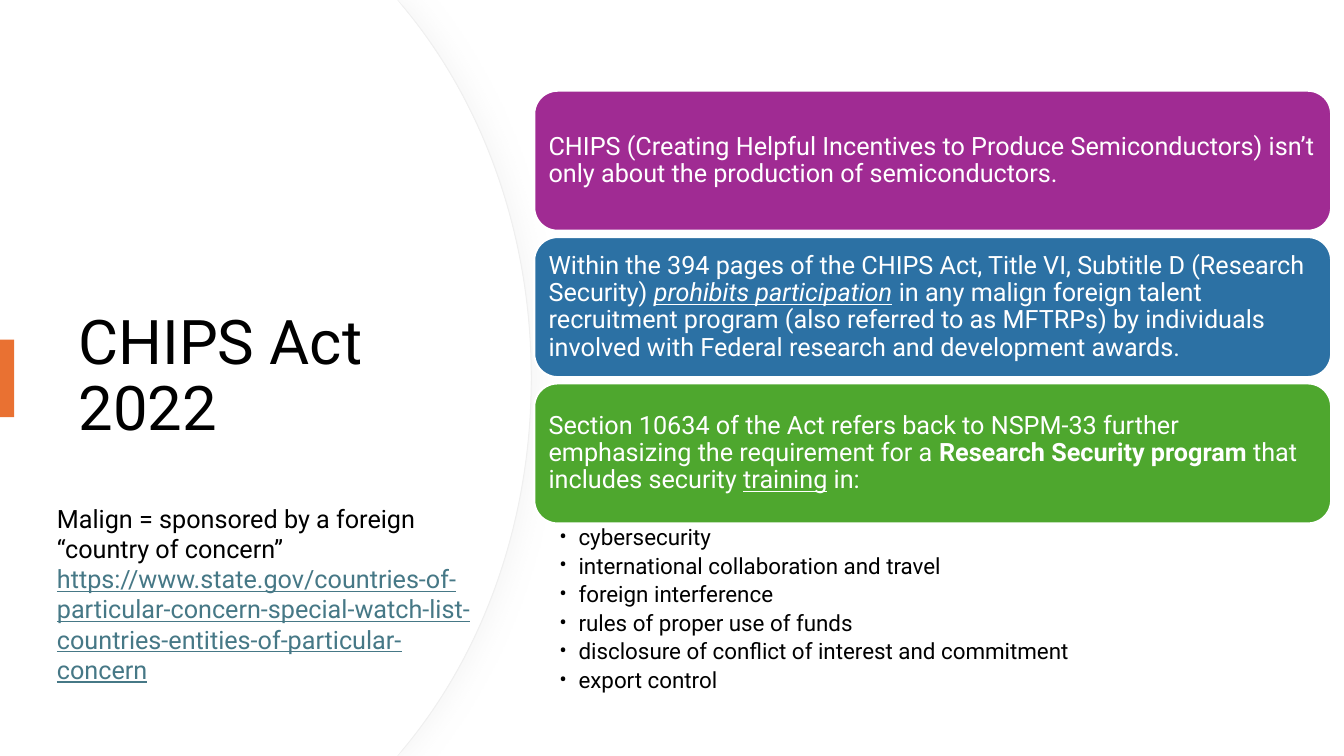
from dataclasses import dataclass

import lxml.etree
import pptx
import pptx.dml.color
import pptx.enum.shapes
import pptx.enum.text
import pptx.oxml
import pptx.oxml.ns
import pptx.util

COLORS = {
    "white": "FFFFFF",
    "black": "000000",
    "panel_edge": "EFEFEF",
    "panel_shadow": "D9D9D9",
    "accent": "E97132",
    "purple": "A02B93",
    "blue": "2C71A4",
    "green": "4EA72E",
    "link": "467886",
}
FONT = "Roboto"
SLIDE_WIDTH = pptx.util.Inches(13.333)
SLIDE_HEIGHT = pptx.util.Inches(7.5)


@dataclass(frozen=True)
class Area:
    left: float
    top: float
    width: float
    height: float

    def box(self) -> tuple[int, int, int, int]:
        return (across(self.left), down(self.top), across(self.width), down(self.height))


@dataclass(frozen=True)
class Run:
    text: str
    bold: bool = False
    italic: bool = False
    underline: bool = False
    color: str = ""


@dataclass(frozen=True)
class Card:
    color: str
    runs: tuple[Run, ...]


@dataclass(frozen=True)
class TextStyle:
    size: int
    color: str = "black"
    line_spacing: float = 1.0
    space_after: float = 0
    bullet: bool = False


TITLE_AREA = Area(5.1, 16.93, 31.35, 66)
ACCENT_AREA = Area(0, 44.93, 1.05, 10.27)
NOTE_AREA = Area(3.5, 65.87, 33, 25.6)
CARD_AREA = Area(39.75, 12, 59.3, 18.53)
CARD_STEP = 19.36
TOPICS_AREA = Area(39.75, 69.3, 59.3, 23.87)

CARDS = (
    Card("purple", (
        Run("CHIPS (Creating Helpful Incentives to Produce Semiconductors) isn’t "
            "only about the production of semiconductors."),
    )),
    Card("blue", (
        Run("Within the 394 pages of the CHIPS Act, Title VI, Subtitle D (Research Security) "),
        Run("prohibits participation", italic=True, underline=True),
        Run(" in any malign foreign talent recruitment program (also referred to as MFTRPs) "
            "by individuals involved with Federal research and development awards."),
    )),
    Card("green", (
        Run("Section 10634 of the Act refers back to NSPM-33 further emphasizing "
            "the requirement for a "),
        Run("Research Security program ", bold=True),
        Run("that includes security "),
        Run("training", underline=True),
        Run(" in:"),
    )),
)
TOPICS = (
    "cybersecurity",
    "international collaboration and travel",
    "foreign interference",
    "rules of proper use of funds",
    "disclosure of conflict of interest and commitment",
    "export control",
)
NOTE = (
    (Run("Malign = sponsored by a foreign “country of concern”"),),
    (Run("https://www.state.gov/countries-of-particular-concern-special-watch-list-"
         "countries-entities-of-particular-concern", underline=True, color="link"),),
)


def across(share: float) -> int:
    return round(SLIDE_WIDTH * share / 100)


def down(share: float) -> int:
    return round(SLIDE_HEIGHT * share / 100)


def rgb(name: str) -> pptx.dml.color.RGBColor:
    return pptx.dml.color.RGBColor.from_string(COLORS[name])


def paint(shape, fill: str, line: str = "", line_width: float = 0) -> None:
    shape.shadow.inherit = False
    shape.fill.solid()
    shape.fill.fore_color.rgb = rgb(fill)
    if line:
        shape.line.color.rgb = rgb(line)
        shape.line.width = pptx.util.Pt(line_width)
    else:
        shape.line.fill.background()


def add_bullet(paragraph) -> None:
    properties = paragraph._p.get_or_add_pPr()
    indent = pptx.util.Inches(0.19)
    properties.set("marL", str(indent))
    properties.set("indent", str(-indent))
    font = lxml.etree.SubElement(properties, pptx.oxml.ns.qn("a:buFont"))
    font.set("typeface", FONT)
    bullet = lxml.etree.SubElement(properties, pptx.oxml.ns.qn("a:buChar"))
    bullet.set("char", "•")


def write(shape, paragraphs, style: TextStyle, anchor: str = "TOP",
          insets: tuple[float, float, float, float] = (7.2, 3.6, 7.2, 3.6)) -> None:
    frame = shape.text_frame
    frame.word_wrap = True
    frame.vertical_anchor = pptx.enum.text.MSO_ANCHOR[anchor]
    (frame.margin_left, frame.margin_top,
     frame.margin_right, frame.margin_bottom) = map(pptx.util.Pt, insets)
    for index, runs in enumerate(paragraphs):
        paragraph = frame.add_paragraph() if index else frame.paragraphs[0]
        if style.bullet:
            add_bullet(paragraph)
        paragraph.alignment = pptx.enum.text.PP_ALIGN.LEFT
        paragraph.line_spacing = style.line_spacing
        paragraph.space_after = pptx.util.Pt(style.space_after)
        for part in runs:
            run = paragraph.add_run()
            run.text = part.text
            run.font.name = FONT
            run.font.size = pptx.util.Pt(style.size)
            run.font.bold = part.bold
            run.font.italic = part.italic
            run.font.underline = part.underline
            run.font.color.rgb = rgb(part.color or style.color)


def add_curved_panel(slide, shift: float = 0):
    upper = [(x + shift, y) for x, y in ((30.08, 1.07), (35.93, 13.6), (39.53, 30.93))]
    lower = [(x, 100 - y) for x, y in reversed(upper)]
    outline = [(29.55, 0), *upper, (39.53 + shift, 50), *lower, (29.55, 100), (0, 100)]
    builder = slide.shapes.build_freeform(0, 0)
    builder.add_line_segments([(across(x), down(y)) for x, y in outline], close=True)
    panel = builder.convert_to_shape()
    segments = list(panel._element.iter(pptx.oxml.ns.qn("a:lnTo")))
    for start in (2, 5):
        first, *others = segments[start:start + 3]
        first.tag = pptx.oxml.ns.qn("a:cubicBezTo")
        for segment in others:
            first.append(segment[0])
            segment.getparent().remove(segment)
    return panel


def add_panel_shadow(shape) -> None:
    effects = shape._element.spPr.find(pptx.oxml.ns.qn("a:effectLst"))
    effects.append(pptx.oxml.parse_xml(
        f'<a:outerShdw {pptx.oxml.ns.nsdecls("a")} blurRad="{pptx.util.Pt(20)}" '
        f'dist="{pptx.util.Pt(3)}" dir="0" algn="l" rotWithShape="0">'
        f'<a:srgbClr val="{COLORS["panel_shadow"]}"><a:alpha val="25000"/></a:srgbClr>'
        '</a:outerShdw>'))


def main() -> None:
    presentation = pptx.Presentation()
    presentation.slide_width = SLIDE_WIDTH
    presentation.slide_height = SLIDE_HEIGHT
    slide = presentation.slides.add_slide(presentation.slide_layouts[6])
    shapes = slide.shapes
    shape_kinds = pptx.enum.shapes.MSO_SHAPE

    edge_panel = add_curved_panel(slide)
    paint(edge_panel, "white", "panel_edge", 0.75)
    add_panel_shadow(edge_panel)
    paint(add_curved_panel(slide, -0.07), "white")

    title = shapes.add_textbox(*TITLE_AREA.box())
    write(title, ((Run("CHIPS Act 2022"),),), TextStyle(44, line_spacing=0.9), "MIDDLE")
    paint(shapes.add_shape(shape_kinds.RECTANGLE, *ACCENT_AREA.box()), "accent")

    for index, card in enumerate(CARDS):
        area = Area(CARD_AREA.left, CARD_AREA.top + index * CARD_STEP,
                    CARD_AREA.width, CARD_AREA.height)
        shape = shapes.add_shape(shape_kinds.ROUNDED_RECTANGLE, *area.box())
        paint(shape, card.color, "white", 1.5)
        write(shape, (card.runs,), TextStyle(18, "white", 0.9), "MIDDLE", (5.4, 5, 4.6, 5))

    topics = shapes.add_textbox(*TOPICS_AREA.box())
    write(topics, [(Run(topic),) for topic in TOPICS],
          TextStyle(16, line_spacing=0.9, space_after=3.2, bullet=True),
          insets=(18, 1.5, 8.5, 1.5))
    write(shapes.add_textbox(*NOTE_AREA.box()), NOTE, TextStyle(18))

    presentation.save("out.pptx")


if __name__ == "__main__":
    main()
